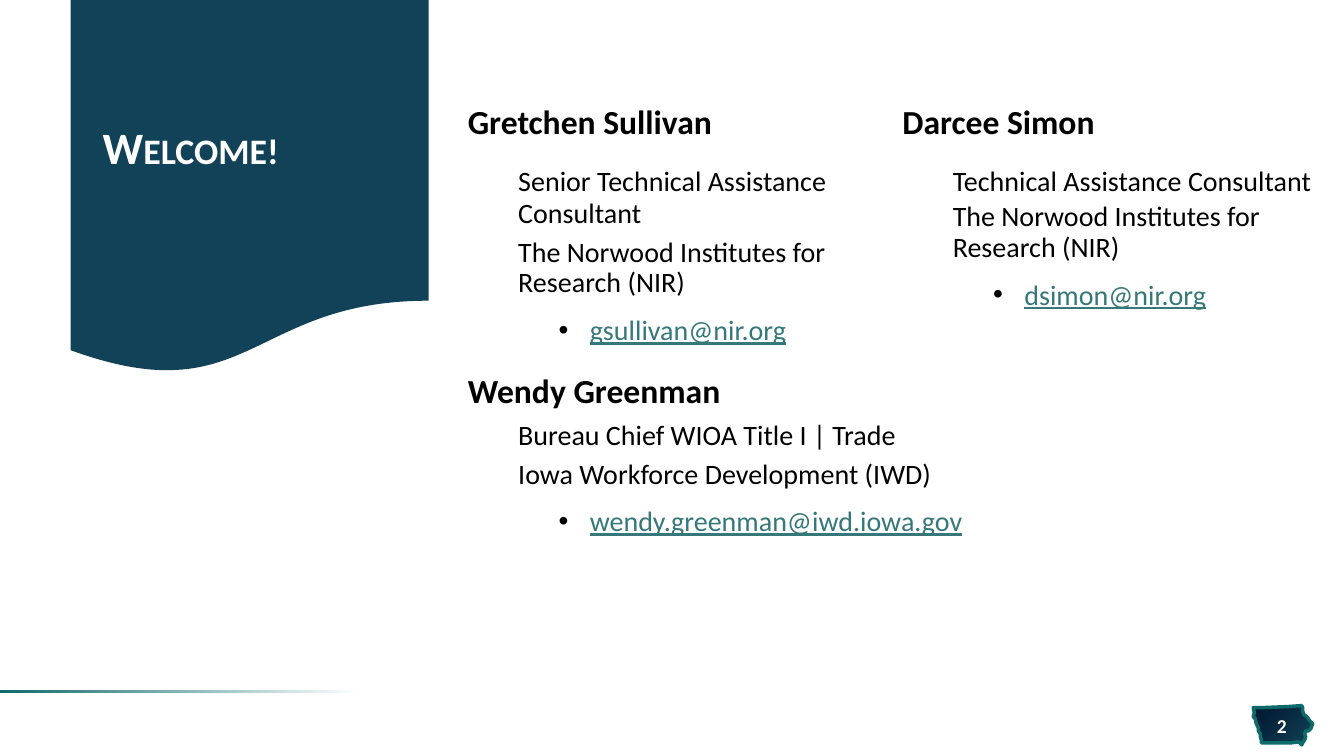
"""Builds the welcome slide with the presenters' contact details."""
from lxml import etree
from pptx import Presentation
from pptx.dml.color import RGBColor
from pptx.enum.shapes import MSO_SHAPE
from pptx.enum.text import MSO_ANCHOR, PP_ALIGN
from pptx.oxml.ns import qn
from pptx.util import Inches, Pt

RECTANGLE = MSO_SHAPE.RECTANGLE
DOCUMENT = MSO_SHAPE.FLOWCHART_DOCUMENT
MIDDLE = MSO_ANCHOR.MIDDLE
CENTER = PP_ALIGN.CENTER
FONT = "Calibri"
COLORS = {"white": "FFFFFF", "black": "000000", "navy": "114257",
          "night": "00162E", "teal": "0F6A6B", "link": "367879"}

TITLE = "Welcome!"
PAGE_NUMBER = "2"
CELLS = [
    (0, 0, 0, [("name", "Gretchen Sullivan")]),
    (0, 1, 0, [("name", "Darcee Simon")]),
    (1, 0, 5, [("role", "Senior Technical Assistance Consultant"),
               ("employer", "The Norwood Institutes for Research (NIR)"),
               ("email", "gsullivan@nir.org")]),
    (1, 1, 3, [("role", "Technical Assistance Consultant"),
               ("employer", "The Norwood Institutes for Research (NIR)"),
               ("email", "dsimon@nir.org")]),
    (2, 0, 5, [("name", "Wendy Greenman"),
               ("role", "Bureau Chief WIOA Title I | Trade"),
               ("employer", "Iowa Workforce Development (IWD)"),
               ("email", "wendy.greenman@iwd.iowa.gov")]),
]
STYLES = {
    "name": {"level": 0, "size": 24, "left": 0, "spacing": 1.0},
    "role": {"level": 1, "size": 20, "left": 0.5, "spacing": 0.95},
    "employer": {"level": 2, "size": 20, "left": 0.5, "spacing": 0.9},
    "email": {"level": 3, "size": 20, "left": 1.21, "spacing": 0.9},
}
EMAIL_HANGING = -0.31
EMAIL_SPACE = 12
COLUMN_WIDTHS = [4.31, 4.4]
ROW_HEIGHTS = [0.52, 2.05, 2.54]
STATE_OUTLINE = [
    (12.91, 7), (12.77, 7.01), (12.53, 7.02), (12.43, 7.02), (12.44, 7.07),
    (12.43, 7.11), (12.45, 7.13), (12.46, 7.18), (12.48, 7.22), (12.48, 7.25),
    (12.5, 7.28), (12.5, 7.31), (12.51, 7.34), (12.51, 7.37), (12.8, 7.37),
    (12.88, 7.36), (12.91, 7.39), (12.92, 7.37), (12.94, 7.34), (12.95, 7.31),
    (12.94, 7.28), (12.95, 7.25), (12.98, 7.25), (13, 7.23), (13.02, 7.18),
    (12.99, 7.15), (12.97, 7.12), (12.95, 7.1), (12.93, 7.09), (12.92, 7.05),
    (12.92, 7.02),
]


def color(name):
    return RGBColor.from_string(COLORS[name])


def fill_gradient(shape, angle, stops):
    shape.fill.gradient()
    shape.fill.gradient_angle = angle
    for stop, (position, name) in zip(shape.fill.gradient_stops, stops):
        stop.position = position
        stop.color.rgb = color(name)


def add_plain_shape(slide, kind, *place):
    shape = slide.shapes.add_shape(kind, *map(Inches, place))
    shape.shadow.inherit = False
    shape.line.fill.background()
    return shape


def format_span(span, size, name, bold):
    span.font.name = FONT
    span.font.size = Pt(size)
    span.font.bold = bold
    span.font.color.rgb = color(name)


def add_label(slide, text, size, place, side_inset):
    box = slide.shapes.add_textbox(*map(Inches, place))
    frame = box.text_frame
    frame.word_wrap = True
    frame.vertical_anchor = MIDDLE
    frame.margin_left = frame.margin_right = Inches(side_inset)
    frame.text = text
    para = frame.paragraphs[0]
    format_span(para.runs[0], size, "white", True)
    return para


def add_bullet(properties):
    bullet_color = etree.SubElement(properties, qn("a:buClr"))
    etree.SubElement(bullet_color, qn("a:srgbClr"), val=COLORS["black"])
    etree.SubElement(properties, qn("a:buFont"), typeface="Arial")
    etree.SubElement(properties, qn("a:buChar"), char="•")


def write_para(para, kind, text, space_before):
    style = STYLES[kind]
    is_email = kind == "email"
    para.text = text
    para.level = style["level"]
    para.line_spacing = style["spacing"]
    para.space_before = Pt(space_before)
    properties = para._p.get_or_add_pPr()
    properties.set("marL", str(Inches(style["left"])))
    properties.set("indent", str(Inches(EMAIL_HANGING if is_email else 0)))
    if is_email:
        add_bullet(properties)
    span = para.runs[0]
    format_span(span, style["size"], "link" if is_email else "black", kind == "name")
    span.font.underline = is_email


def add_state_badge(slide):
    points = [(Inches(x), Inches(y)) for x, y in STATE_OUTLINE]
    builder = slide.shapes.build_freeform(*points[0])
    builder.add_line_segments(points[1:], close=True)
    state = builder.convert_to_shape()
    state.shadow.inherit = False
    fill_gradient(state, 315, [(0, "night"), (1, "navy")])
    state.line.color.rgb = color("teal")
    state.line.width = Pt(2.5)
    number = add_label(slide, PAGE_NUMBER, 14, (12.46, 7.08, 0.51, 0.23), 0)
    number.alignment = CENTER


def add_title_panel(slide):
    panel = add_plain_shape(slide, DOCUMENT, 0.7, 0, 3.55, 3.72)
    panel.fill.solid()
    panel.fill.fore_color.rgb = color("navy")
    title = add_label(slide, TITLE, 32, (0.92, 0.19, 3.11, 2.59), 0.1)
    title.line_spacing = 0.9
    title.runs[0].font._element.set("cap", "small")


def add_contacts(slide):
    frame = slide.shapes.add_table(
        len(ROW_HEIGHTS), len(COLUMN_WIDTHS), Inches(4.43), Inches(0.91),
        Inches(sum(COLUMN_WIDTHS)), Inches(sum(ROW_HEIGHTS)))
    table = frame.table
    table.first_row = table.horz_banding = False
    for column, width in zip(table.columns, COLUMN_WIDTHS):
        column.width = Inches(width)
    for row, height in zip(table.rows, ROW_HEIGHTS):
        row.height = Inches(height)
    for cell in table.iter_cells():
        cell.fill.background()
        cell.margin_left = Inches(0.21)
        cell.margin_right = cell.margin_top = cell.margin_bottom = Inches(0.11)
    table.cell(2, 0).merge(table.cell(2, 1))
    for row, column, gap, lines in CELLS:
        text_frame = table.cell(row, column).text_frame
        for index, (kind, text) in enumerate(lines):
            para = text_frame.add_paragraph() if index else text_frame.paragraphs[0]
            space = EMAIL_SPACE if kind == "email" else gap
            write_para(para, kind, text, space if index else 0)


def main():
    deck = Presentation()
    deck.slide_width, deck.slide_height = Inches(13.33), Inches(7.5)
    page = deck.slides.add_slide(deck.slide_layouts[6])
    accent = add_plain_shape(page, RECTANGLE, 0, 6.85, 3.8, 0.03)
    fill_gradient(accent, 180, [(0.06, "white"), (1, "teal")])
    add_state_badge(page)
    add_title_panel(page)
    add_contacts(page)
    deck.save("out.pptx")


if __name__ == "__main__":
    main()
